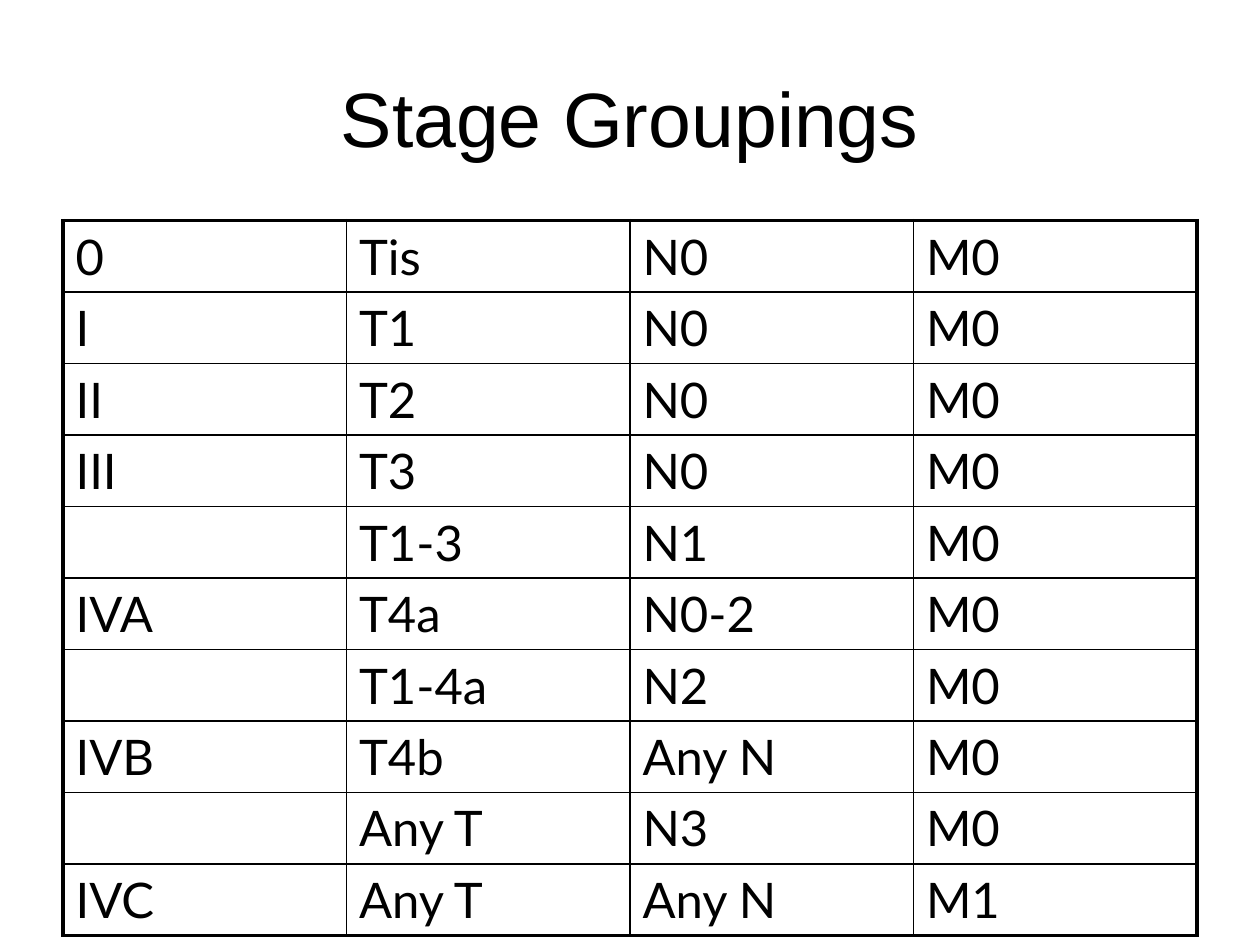
import pptx
import pptx.dml.color
import pptx.enum.text
import pptx.oxml.ns
import pptx.util
from lxml import etree
from pptx.util import Inches

TITLE = "Stage Groupings"
STAGES = [
    ("0", "Tis", "N0", "M0"),
    ("I", "T1", "N0", "M0"),
    ("II", "T2", "N0", "M0"),
    ("III", "T3", "N0", "M0"),
    ("", "T1-3", "N1", "M0"),
    ("IVA", "T4a", "N0-2", "M0"),
    ("", "T1-4a", "N2", "M0"),
    ("IVB", "T4b", "Any N", "M0"),
    ("", "Any T", "N3", "M0"),
    ("IVC", "Any T", "Any N", "M1"),
]
BLACK, WHITE = "000000", "FFFFFF"
LEFT, WIDTH = 0.5, 9
TABLE_TOP, TABLE_HEIGHT = 1.75, 5.67
OUTER, INNER = 2.25, 1


def rgb(color):
    return pptx.dml.color.RGBColor.from_string(color)


def write(tf, text, font, size, color=BLACK, align=None):
    p = tf.paragraphs[0]
    p.alignment = align
    r = p.add_run()
    r.text = text
    r.font.name = font
    r.font.size = pptx.util.Pt(size)
    r.font.color.rgb = rgb(color)


def set_border(cell, side, width, color=BLACK):
    """Draw one side of a cell: L, R, T or B, called in that order."""
    qn = pptx.oxml.ns.qn
    ln = etree.SubElement(cell._tc.get_or_add_tcPr(), qn(f"a:ln{side}"),
                          w=str(pptx.util.Pt(width)))
    fill = etree.SubElement(ln, qn("a:solidFill"))
    etree.SubElement(fill, qn("a:srgbClr"), val=color)


def add_title(slide):
    box = slide.shapes.add_textbox(Inches(LEFT), Inches(0.3),
                                   Inches(WIDTH), Inches(1.25))
    tf = box.text_frame
    tf.word_wrap = True
    tf.vertical_anchor = pptx.enum.text.MSO_ANCHOR.MIDDLE
    write(tf, TITLE, "Arial", 44, align=pptx.enum.text.PP_ALIGN.CENTER)


def add_stage_table(slide):
    n_rows, n_cols = len(STAGES), len(STAGES[0])
    table = slide.shapes.add_table(
        n_rows, n_cols, Inches(LEFT), Inches(TABLE_TOP),
        Inches(WIDTH), Inches(TABLE_HEIGHT)).table
    table.first_row = table.horz_banding = False
    for i, stage in enumerate(STAGES):
        for j, text in enumerate(stage):
            cell = table.cell(i, j)
            edges = {"L": j == 0, "R": j == n_cols - 1,
                     "T": i == 0, "B": i == n_rows - 1}
            for side, is_outer in edges.items():
                set_border(cell, side, OUTER if is_outer else INNER)
            cell.fill.background()
            if text:
                write(cell.text_frame, text, "Lato", 28)


def main():
    prs = pptx.Presentation()
    prs.slide_width, prs.slide_height = Inches(10), Inches(7.5)
    slide = prs.slides.add_slide(prs.slide_layouts[6])
    slide.background.fill.solid()
    slide.background.fill.fore_color.rgb = rgb(WHITE)
    add_title(slide)
    add_stage_table(slide)
    prs.save("out.pptx")


if __name__ == "__main__":
    main()
